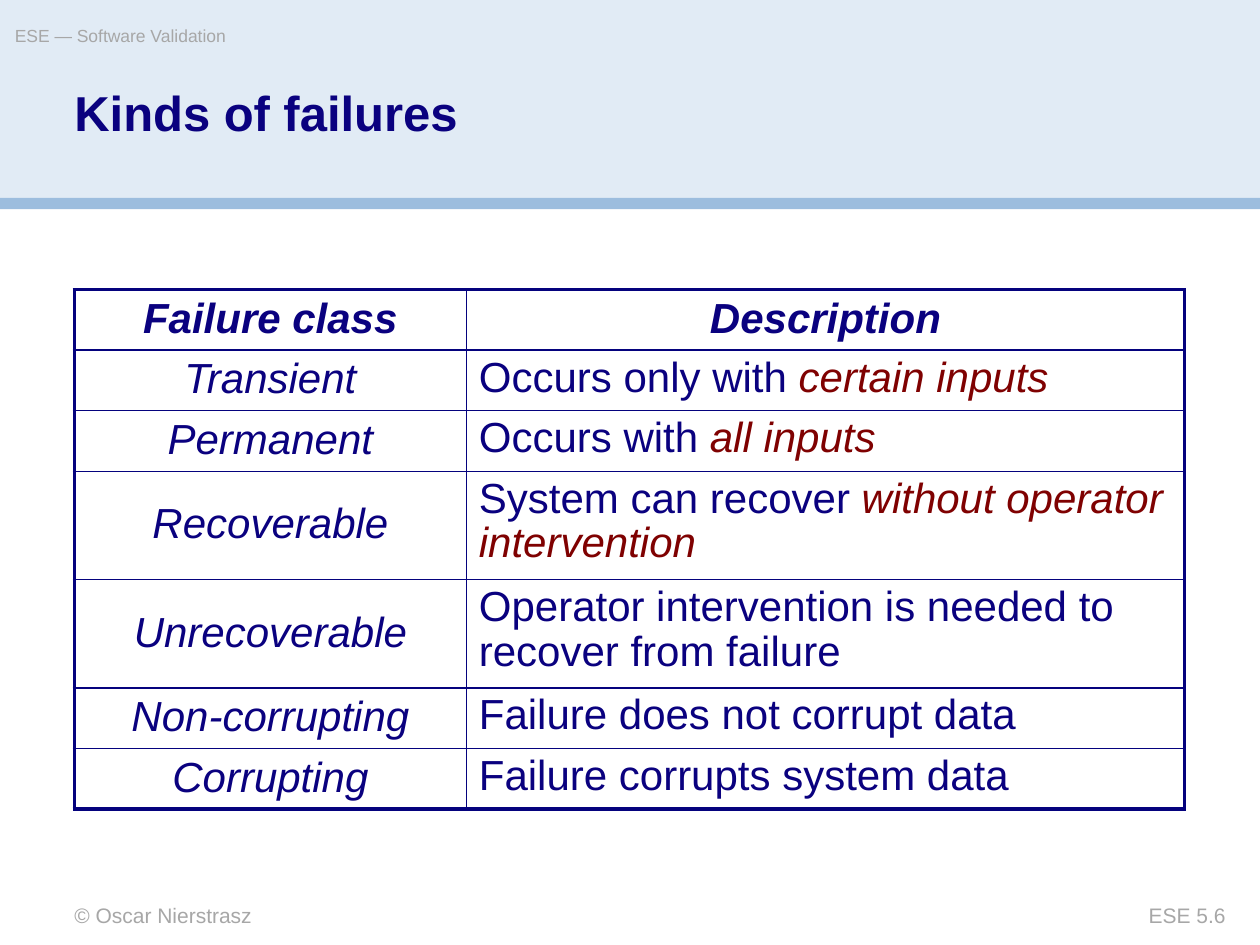
from lxml.etree import SubElement
from pptx import Presentation
from pptx.dml.color import RGBColor
from pptx.enum.shapes import MSO_SHAPE as Shape
from pptx.enum.text import MSO_ANCHOR as Anchor, PP_ALIGN as Align
from pptx.oxml.ns import qn
from pptx.util import Cm, Pt

NAVY = RGBColor(0x0A, 0x01, 0x7F)
RULE = RGBColor(0x05, 0x02, 0x7D)
MAROON = RGBColor(0x7F, 0x01, 0x01)
GREY = RGBColor(0xA7, 0xA7, 0xA7)
PALE = RGBColor(0xE1, 0xEB, 0xF5)
BLUE = RGBColor(0x9C, 0xBD, 0xDE)

HEADINGS = ("Failure class", "Description")
FAILURES = [
    ("Transient", "Occurs only with ", "certain inputs"),
    ("Permanent", "Occurs with ", "all inputs"),
    ("Recoverable", "System can recover ", "without operator intervention"),
    ("Unrecoverable", "Operator intervention is needed to recover from failure", ""),
    ("Non-corrupting", "Failure does not corrupt data", ""),
    ("Corrupting", "Failure corrupts system data", ""),
]
COLUMN_WIDTHS = (7.9, 14.48)
ROW_HEIGHTS = (1.15, 1.15, 1.15, 2.06, 2.06, 1.15, 1.15)


class SlideBuilder:
    body = {"name": "Arial", "size": Pt(24), "bold": False, "italic": False}
    thin, thick = Pt(1), Pt(2.25)

    def __init__(self, page):
        self.page = page

    def band(self, top, height, color):
        band = self.page.shapes.add_shape(Shape.RECTANGLE, 0, Cm(top), Cm(25.4), Cm(height))
        band.shadow.inherit = False
        band.fill.solid()
        band.fill.fore_color.rgb = color
        band.line.fill.background()

    def span(self, para, text, color, **changes):
        span = para.add_run()
        span.text = text
        for name, value in {**self.body, **changes}.items():
            setattr(span.font, name, value)
        span.font.color.rgb = color

    def text(self, text, left, top, width, height, color, align=Align.LEFT,
             spacing=1.0, wrap=True, **changes):
        box = self.page.shapes.add_textbox(Cm(left), Cm(top), Cm(width), Cm(height))
        frame = box.text_frame
        layout = {"word_wrap": wrap, "margin_left": 0, "margin_right": 0,
                  "margin_top": 0, "margin_bottom": 0}
        for name, value in layout.items():
            setattr(frame, name, value)
        para = frame.paragraphs[0]
        para.alignment = align
        para.line_spacing = spacing
        self.span(para, text, color, **changes)

    def borders(self, cell, outer_sides):
        properties = cell._tc.get_or_add_tcPr()
        for side in "LRTB":
            width = self.thick if side in outer_sides else self.thin
            line = SubElement(properties, qn(f"a:ln{side}"), w=str(width))
            fill = SubElement(line, qn("a:solidFill"))
            SubElement(fill, qn("a:srgbClr"), val=str(RULE))
        cell.fill.background()

    def cell(self, cell, spans, align, anchor, outer_sides):
        self.borders(cell, outer_sides)
        cell.vertical_anchor = anchor
        para = cell.text_frame.paragraphs[0]
        para.alignment = align
        para.line_spacing = 0.95
        for text, color, changes in spans:
            if text:
                self.span(para, text, color, **changes)

    def table(self, left, top):
        frame = self.page.shapes.add_table(
            len(ROW_HEIGHTS), len(COLUMN_WIDTHS), Cm(left), Cm(top),
            Cm(sum(COLUMN_WIDTHS)), Cm(sum(ROW_HEIGHTS)))
        table = frame.table
        table.first_row = table.horz_banding = False
        for column, width in zip(table.columns, COLUMN_WIDTHS):
            column.width = Cm(width)
        for row, height in zip(table.rows, ROW_HEIGHTS):
            row.height = Cm(height)

        italic = {"italic": True}
        heading = {"italic": True, "bold": True}
        for index, (text, side) in enumerate(zip(HEADINGS, "LR")):
            self.cell(table.cell(0, index), [(text, NAVY, heading)],
                      Align.CENTER, Anchor.MIDDLE, side + "T")
        for index, (kind, plain, stress) in enumerate(FAILURES, 1):
            edge = "B" if index == len(FAILURES) else ""
            self.cell(table.cell(index, 0), [(kind, NAVY, italic)],
                      Align.CENTER, Anchor.MIDDLE, "L" + edge)
            self.cell(table.cell(index, 1), [(plain, NAVY, {}), (stress, MAROON, italic)],
                      Align.LEFT, Anchor.TOP, "R" + edge)


def main():
    deck = Presentation()
    deck.slide_width, deck.slide_height = Cm(25.4), Cm(19.05)
    builder = SlideBuilder(deck.slides.add_slide(deck.slide_layouts[6]))
    builder.band(0, 4.01, PALE)
    builder.band(3.99, 0.23, BLUE)
    builder.text("© Oscar Nierstrasz", 1.5, 18.19, 10.59, 0.51, GREY, size=Pt(12))
    builder.text("ESE — Software Validation", 0.3, 0.51, 14.99, 0.71, GREY,
                 wrap=False, size=Pt(10))
    builder.text("ESE 5.6", 20.95, 18.19, 3.76, 0.51, GREY, Align.RIGHT, size=Pt(12))
    builder.text("Kinds of failures", 1.5, 1.8, 18.39, 2.26, NAVY,
                 spacing=0.9, size=Pt(28), bold=True)
    builder.table(1.5, 5.84)
    deck.save("out.pptx")


if __name__ == "__main__":
    main()
